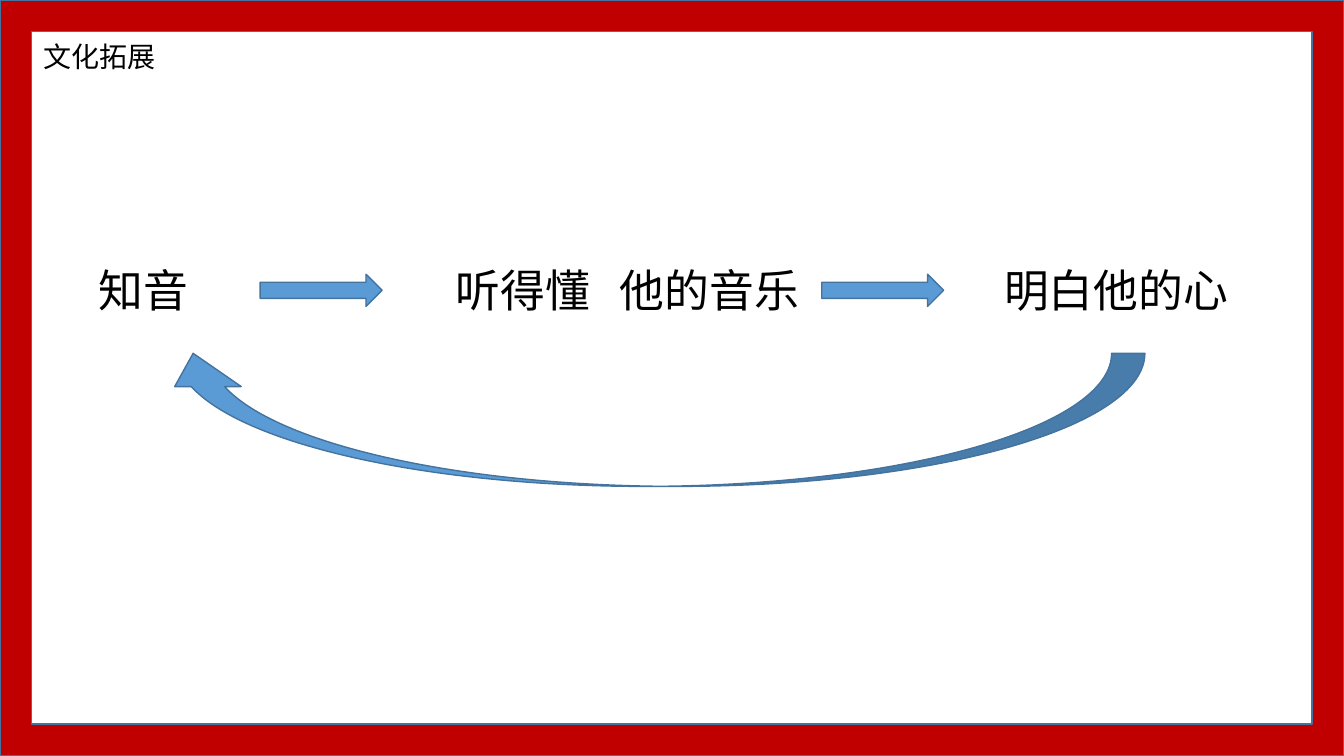
import pptx
import pptx.dml.color
import pptx.enum.shapes
import pptx.enum.text
import pptx.oxml
import pptx.oxml.ns
import pptx.util
from pptx.util import Inches

RED = pptx.dml.color.RGBColor(0xC0, 0x00, 0x00)
BLUE = pptx.dml.color.RGBColor(0x5B, 0x9B, 0xD5)
DARK_BLUE = pptx.dml.color.RGBColor(0x43, 0x73, 0x9E)
BLACK = pptx.dml.color.RGBColor(0x00, 0x00, 0x00)
FONT_NAME = "Noto Sans CJK SC"
MSO_SHAPE = pptx.enum.shapes.MSO_SHAPE


def add_filled_shape(slide, kind, left, top, width, height, fill):
    shape = slide.shapes.add_shape(
        kind, Inches(left), Inches(top), Inches(width), Inches(height))
    shape.shadow.inherit = False
    shape.fill.solid()
    shape.fill.fore_color.rgb = fill
    shape.line.color.rgb = DARK_BLUE
    shape.line.width = pptx.util.Pt(1)
    return shape


def write_text(shape, text, size, tab_stop=None):
    """Fill a shape with one left-aligned line, with an optional tab stop in inches."""
    frame_format = {
        "word_wrap": True,
        "auto_size": pptx.enum.text.MSO_AUTO_SIZE.SHAPE_TO_FIT_TEXT,
        "vertical_anchor": pptx.enum.text.MSO_ANCHOR.TOP,
    }
    for name, value in frame_format.items():
        setattr(shape.text_frame, name, value)
    paragraph = shape.text_frame.paragraphs[0]
    paragraph.alignment = pptx.enum.text.PP_ALIGN.LEFT
    if tab_stop:
        tabs = pptx.oxml.parse_xml(
            f'<a:tabLst {pptx.oxml.ns.nsdecls("a")}>'
            f'<a:tab pos="{Inches(tab_stop)}" algn="l"/></a:tabLst>')
        paragraph._p.get_or_add_pPr().append(tabs)
    run = paragraph.add_run()
    run.text = text
    font_format = {"name": FONT_NAME, "size": pptx.util.Pt(size)}
    for name, value in font_format.items():
        setattr(run.font, name, value)
    run.font.color.rgb = BLACK
    run._r.get_or_add_rPr().append(pptx.oxml.parse_xml(
        f'<a:ea {pptx.oxml.ns.nsdecls("a")} typeface="{FONT_NAME}"/>'))


presentation = pptx.Presentation()
presentation.slide_width = Inches(13.33)
presentation.slide_height = Inches(7.5)
slide = presentation.slides.add_slide(presentation.slide_layouts[5])

border = add_filled_shape(slide, MSO_SHAPE.FRAME, 0, 0, 13.33, 7.5, RED)
border.adjustments[0] = 0.042

title = slide.shapes.title
title_place = {"left": 0.33, "top": 0.34, "width": 1.92, "height": 0.44}
for name, value in title_place.items():
    setattr(title, name, Inches(value))
write_text(title, "文化拓展", 20)

# The chain of meanings, left to right
steps = [
    ("知音", 0.88, 1.17, None),
    ("听得懂\t他的音乐", 4.42, 3.69, 1.63),
    ("明白他的心", 9.86, 2.61, None),
]
for text, left, width, tab_stop in steps:
    step = slide.shapes.add_textbox(
        Inches(left), Inches(2.56), Inches(width), Inches(0.64))
    write_text(step, text, 32, tab_stop)

for left in (2.58, 8.15):
    add_filled_shape(slide, MSO_SHAPE.RIGHT_ARROW, left, 2.72, 1.21, 0.32, BLUE)

return_arrow = add_filled_shape(
    slide, MSO_SHAPE.CURVED_LEFT_ARROW, 5.81, -0.72, 1.32, 9.77, BLUE)
return_arrow.rotation = 90

presentation.save("out.pptx")
